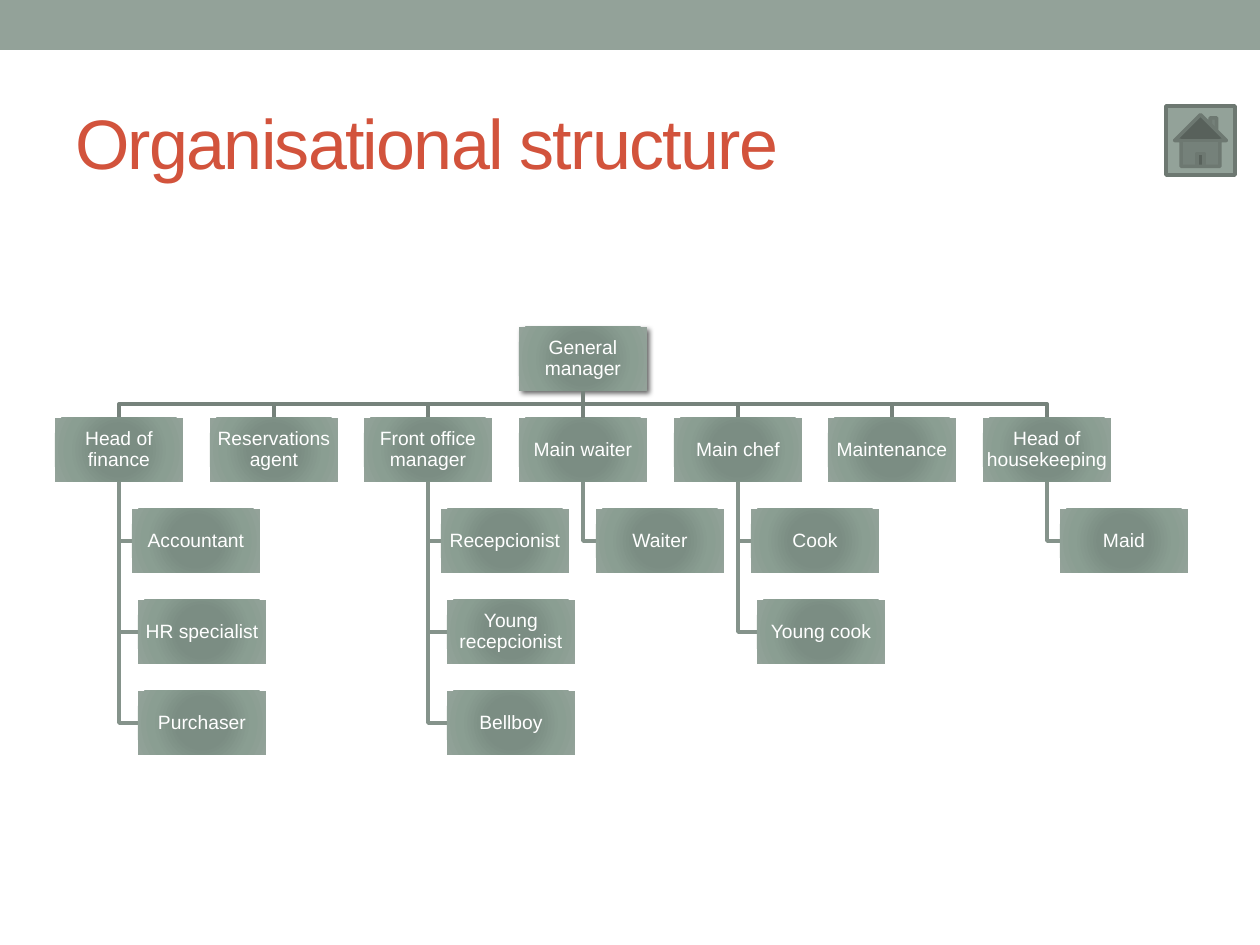
from lxml import etree
from pptx import Presentation
from pptx.dml.color import RGBColor
from pptx.enum.shapes import MSO_CONNECTOR as CONNECTOR, MSO_SHAPE as SHAPE
from pptx.enum.text import MSO_ANCHOR as ANCHOR, PP_ALIGN as ALIGN
from pptx.oxml import parse_xml
from pptx.oxml.ns import nsdecls, qn
from pptx.util import Emu, Pt

SCALE = 914400 / 126  # EMU per px
COLORS = {
    "sage": "93A299", "title": "D2533C", "text": "FFFFFF",
    "trunk": "76827B", "branch": "85938B", "button": "6D7871", "shadow": "000000",
}
GRADIENT = [(0, "7B8E82"), (34, "7B8D83"), (70, "8A9E92"), (100, "93A299")]
CARD_WIDTH, CARD_HEIGHT = 128, 64
LEFT, TOP, ROW_STEP = 54, 327, 91
CHART_SPAN = 928  # first to last department
LINE_WIDTH = Pt(2.08)

DEPARTMENTS = [
    ("Head of finance", ["Accountant", "HR specialist", "Purchaser"]),
    ("Reservations agent", []),
    ("Front office manager", ["Recepcionist", "Young recepcionist", "Bellboy"]),
    ("Main waiter", ["Waiter"]),
    ("Main chef", ["Cook", "Young cook"]),
    ("Maintenance", []),
    ("Head of housekeeping", ["Maid"]),
]

presentation = Presentation()
presentation.slide_width = Emu(round(1260 * SCALE))
presentation.slide_height = Emu(round(945 * SCALE))
slide = presentation.slides.add_slide(presentation.slide_layouts[6])
shapes = slide.shapes


def px(*lengths):
    return [Emu(round(length * SCALE)) for length in lengths]


def add_card(left, top, label):
    card = shapes.add_shape(SHAPE.RECTANGLE, *px(left, top, CARD_WIDTH, CARD_HEIGHT))
    card.shadow.inherit = False
    card.line.fill.background()
    card.fill.background()
    stops = "".join(
        f'<a:gs pos="{position * 1000}"><a:srgbClr val="{color}"/></a:gs>'
        for position, color in GRADIENT)
    properties = card._element.spPr
    properties.replace(properties.find(qn("a:noFill")), parse_xml(
        f'<a:gradFill {nsdecls("a")} rotWithShape="1"><a:gsLst>{stops}</a:gsLst>'
        '<a:path path="circle"><a:fillToRect l="100000" t="100000" r="100000" b="100000"/>'
        '</a:path></a:gradFill>'))
    frame = card.text_frame
    frame.word_wrap = True
    frame.vertical_anchor = ANCHOR.MIDDLE
    frame.margin_left = frame.margin_right = frame.margin_top = frame.margin_bottom = px(1)[0]
    paragraph = frame.paragraphs[0]
    paragraph.alignment = ALIGN.CENTER
    paragraph.line_spacing = 0.9
    run = paragraph.add_run()
    run.text = label
    run.font.name = "Arial"
    run.font.size = Pt(11)
    run.font.color.rgb = RGBColor.from_string(COLORS["text"])
    return card


# Top band
band = shapes.add_shape(SHAPE.RECTANGLE, *px(0, 0, 1260, 50))
band.shadow.inherit = False
band.fill.solid()
band.fill.fore_color.rgb = RGBColor.from_string(COLORS["sage"])
band.line.fill.background()

# Title
title = shapes.add_textbox(*px(63, 73, 1134, 136))
title.text_frame.word_wrap = True
title.text_frame.vertical_anchor = ANCHOR.MIDDLE
title_run = title.text_frame.paragraphs[0].add_run()
title_run.text = "Organisational structure"
title_run.font.name = "Arial"
title_run.font.size = Pt(40)
title_run.font.color.rgb = RGBColor.from_string(COLORS["title"])
title_run._r.get_or_add_rPr().set("spc", "-100")

# Work out card places and bent lines
manager_left = LEFT + CHART_SPAN // 2 + 1
manager_center = manager_left + CARD_WIDTH // 2
manager_bottom = TOP + CARD_HEIGHT
department_top = TOP + ROW_STEP
bus = (manager_bottom + department_top) // 2
cards, bent_lines = [], []
for column, (department, staff) in enumerate(DEPARTMENTS):
    left = LEFT + 1 + round(column * CHART_SPAN / (len(DEPARTMENTS) - 1))
    center = left + CARD_WIDTH // 2
    cards.append((left, department_top, department))
    for row, person in enumerate(staff):
        person_left = left + (77 if row == 0 else 83)
        person_top = department_top + (row + 1) * ROW_STEP
        middle = person_top + CARD_HEIGHT // 2
        cards.append((person_left, person_top, person))
        bent_lines.append(("branch", [(center, department_top + CARD_HEIGHT),
                                      (center, middle), (person_left, middle)]))
    if center != manager_center:
        bent_lines.append(("trunk", [(manager_center, manager_bottom), (manager_center, bus),
                                     (center, bus), (center, department_top)]))

# Bent lines, behind the cards
for color, points in bent_lines:
    builder = shapes.build_freeform(*points[0], scale=SCALE)
    builder.add_line_segments(points[1:], close=False)
    bent_line = builder.convert_to_shape()
    bent_line.shadow.inherit = False
    bent_line.fill.background()
    bent_line.line.color.rgb = RGBColor.from_string(COLORS[color])
    bent_line.line.width = LINE_WIDTH

# Cards
manager = add_card(manager_left, TOP, "General manager")
manager._element.spPr.find(qn("a:effectLst")).append(parse_xml(
    f'<a:outerShdw {nsdecls("a")} blurRad="{Pt(3)}" dist="{Pt(2)}" dir="2700000">'
    f'<a:srgbClr val="{COLORS["shadow"]}"><a:alpha val="60000"/></a:srgbClr></a:outerShdw>'))
placed = {label: add_card(left, top, label) for left, top, label in cards}

# Straight line from the manager to the department below
straight = shapes.add_connector(
    CONNECTOR.STRAIGHT, *px(manager_center, manager_bottom, manager_center, department_top))
straight.begin_connect(manager, 2)
straight.end_connect(placed["Main waiter"], 0)
straight.line.color.rgb = RGBColor.from_string(COLORS["trunk"])
straight.line.width = LINE_WIDTH
etree.SubElement(straight._element.spPr, qn("a:effectLst"))

# Home button
home = shapes.add_shape(SHAPE.ACTION_BUTTON_HOME, *px(1166, 106, 69, 69))
home.shadow.inherit = False
home.fill.solid()
home.fill.fore_color.rgb = RGBColor.from_string(COLORS["sage"])
home.line.color.rgb = RGBColor.from_string(COLORS["button"])
home.line.width = LINE_WIDTH

presentation.save("out.pptx")
